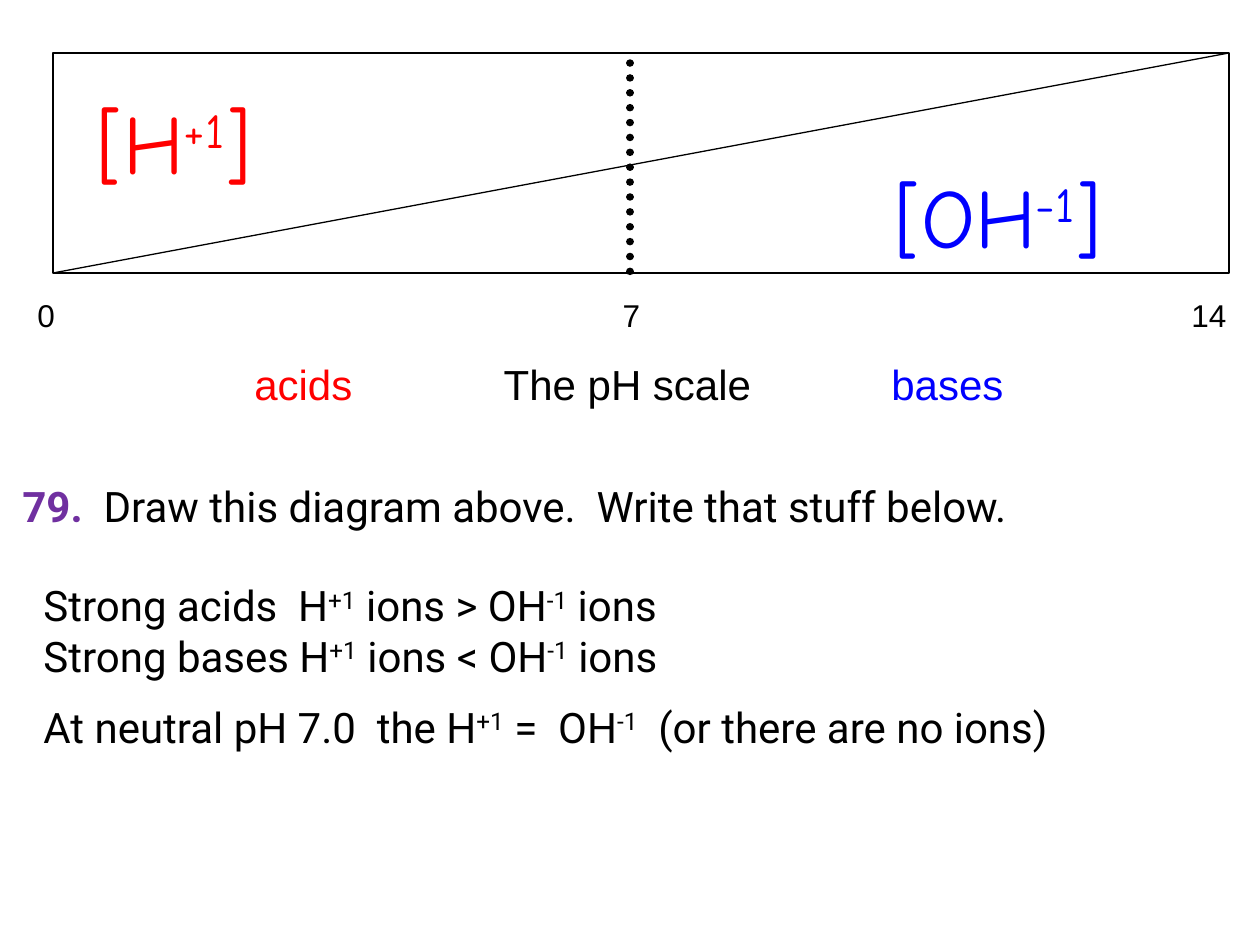
from lxml.etree import SubElement
from pptx import Presentation
from pptx.dml.color import RGBColor
from pptx.enum.dml import MSO_LINE_DASH_STYLE as Dash
from pptx.enum.shapes import MSO_CONNECTOR as Connector, MSO_SHAPE as Shape
from pptx.oxml.ns import qn
from pptx.util import Pt

PX = 914400 / 126
WIDTH, HEIGHT = 1260, 945
INSET = 13
COLORS = {"black": "000000", "red": "FF0000", "blue": "0000FF", "purple": "7030A0"}


def px(n):
    return round(n * PX)


class Sheet:
    """Holds the style and the slide being drawn."""

    def __init__(self, prs):
        self.s = prs.slides.add_slide(prs.slide_layouts[6])

    def color(self, name):
        return RGBColor.from_string(COLORS[name])

    def stroke(self, line, width):
        line.color.rgb = self.color("black")
        line.width = Pt(width)

    def frame(self, x, y, w, h):
        sp = self.s.shapes.add_shape(Shape.RECTANGLE, px(x), px(y), px(w), px(h))
        sp.shadow.inherit = False
        sp.fill.background()
        self.stroke(sp.line, 0.75)

    def line(self, x1, y1, x2, y2, width=0.75, dotted=False):
        cn = self.s.shapes.add_connector(Connector.STRAIGHT, px(x1), px(y1), px(x2), px(y2))
        self.stroke(cn.line, width)
        if dotted:
            cn.line.dash_style = Dash.ROUND_DOT
            cn.line._get_or_add_ln().set("cap", "rnd")
        SubElement(cn._element.spPr, qn("a:effectLst"))

    def text(self, x, y, w, h):
        tf = self.s.shapes.add_textbox(px(x), px(y), px(w), px(h)).text_frame
        tf.word_wrap = True
        return tf

    def paragraph(self, tf, runs, size, font, before=0, indent=0, tabs=()):
        """Each run is (text, color) or (text, color, style); style is "b" or "sup"."""
        p = tf.paragraphs[0] if not tf.paragraphs[0].runs else tf.add_paragraph()
        if before:
            p.space_before = Pt(before)
        pPr = p._p.get_or_add_pPr()
        if indent:
            pPr.set("marL", str(px(indent)))
        if tabs:
            tab_list = SubElement(pPr, qn("a:tabLst"))
            for x, align in tabs:
                SubElement(tab_list, qn("a:tab"), pos=str(px(x - INSET)), algn=align)
        for text, color, *style in runs:
            r = p.add_run()
            r.text = text
            r.font.size, r.font.name = Pt(size), font
            r.font.color.rgb = self.color(color)
            if "b" in style:
                r.font.bold = True
            if "sup" in style:
                r._r.get_or_add_rPr().set("baseline", "30000")


def ions(*parts, color="black"):
    """Alternate plain and superscript runs."""
    return [(t, color, "sup" if i % 2 else "") for i, t in enumerate(parts)]


def main():
    prs = Presentation()
    prs.slide_width, prs.slide_height = px(WIDTH), px(HEIGHT)
    sheet = Sheet(prs)

    # Diagram frame and diagonal
    left, top, width, height = 53, 53, 1176, 220
    sheet.frame(left, top, width, height)
    sheet.line(left, top + height, left + width, top)

    # Scale labels
    tf = sheet.text(0, 290, WIDTH, 126)
    sheet.paragraph(tf, [("\t0\t7\t14", "black")], 18, "Arial",
                    tabs=[(38, "l"), (632, "ctr"), (1227, "r")])
    sheet.paragraph(tf, [("\tacids", "red"), ("\tThe pH scale", "black"), ("\tbases", "blue")],
                    24, "Arial", before=14, tabs=[(255, "l"), (628, "ctr"), (892, "l")])

    # Neutral point
    sheet.line(630, 63, 630, 284, width=4.25, dotted=True)

    # Ion concentrations
    for x, y, w, ion, charge, color in [(84, 84, 294, "[H", "+1", "red"),
                                        (882, 158, 284, "[OH", "-1", "blue")]:
        tf = sheet.text(x, y, w, 113)
        sheet.paragraph(tf, ions(ion, charge, "]", color=color), 48, "Comic Neue")

    # Notes
    tf = sheet.text(0, 474, WIDTH, 394)
    sheet.paragraph(tf, [("79.", "purple", "b"),
                         ("  Draw this diagram above.  Write that stuff below.", "black")],
                    24, "Roboto", indent=10)
    for before, parts in [
        (28, ("Strong acids  H", "+1", " ions > OH", "-1", " ions")),
        (0, ("Strong bases H", "+1", " ions < OH", "-1", " ions")),
        (12, ("At neutral pH 7.0  the H", "+1", " =  OH", "-1", "  (or there are no ions)")),
    ]:
        sheet.paragraph(tf, ions(*parts), 24, "Roboto", before=before, indent=31)

    prs.save("out.pptx")


if __name__ == "__main__":
    main()
